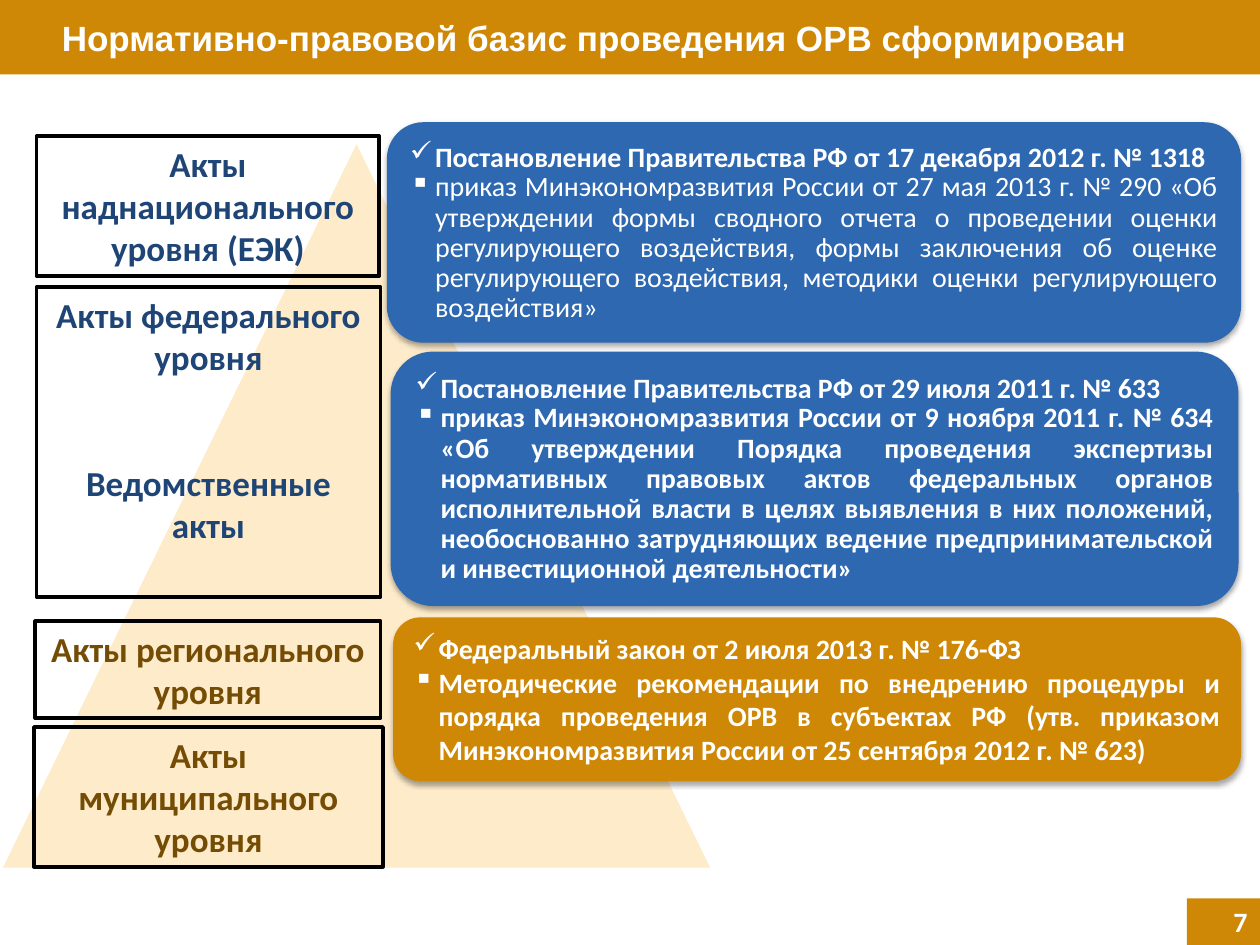
import pptx
import pptx.util
import pptx.dml.color
import pptx.enum.shapes
import pptx.enum.text
import pptx.oxml.ns
from lxml import etree

Inches = pptx.util.Inches
Pt = pptx.util.Pt
Kind = pptx.enum.shapes.MSO_SHAPE
Align = pptx.enum.text.PP_ALIGN
Anchor = pptx.enum.text.MSO_ANCHOR
Fit = pptx.enum.text.MSO_AUTO_SIZE

GOLD = "CF8806"
BLUE = "2D68B1"
NAVY = "1E4576"
BROWN = "744C04"
CREAM = "FDEBCA"
WHITE = "FFFFFF"
BLACK = "000000"


def color(code):
    return pptx.dml.color.RGBColor.from_string(code)


def add_tag(base, name, **attrs):
    tag = etree.SubElement(base, pptx.oxml.ns.qn(name))
    for key, value in attrs.items():
        tag.set(key, str(value))
    return tag


class Deck:
    font = "Calibri"

    def __init__(self):
        self.file = pptx.Presentation()
        self.file.slide_width = Inches(10)
        self.file.slide_height = Inches(7.5)
        self.slide = self.file.slides.add_slide(self.file.slide_layouts[5])

    def shape(self, kind, box, fill=None, line=None):
        item = self.slide.shapes.add_shape(kind, *map(Inches, box))
        item.shadow.inherit = False
        if fill:
            item.fill.solid()
            item.fill.fore_color.rgb = color(fill)
        else:
            item.fill.background()
        if line:
            item.line.color.rgb = color(line)
            item.line.width = Pt(2)
        else:
            item.line.fill.background()
        return item

    def put_text(self, item, lines, size, ink, align, anchor, font=None):
        frame = item.text_frame
        frame.word_wrap = True
        frame.vertical_anchor = anchor
        frame.text = "\n".join(lines)
        for para in frame.paragraphs:
            para.alignment = align
            for run in para.runs:
                run.font.name = font or self.font
                run.font.size = Pt(size)
                run.font.bold = True
                run.font.color.rgb = color(ink)
        return frame

    def title(self, text):
        item = self.slide.shapes.title
        item.left, item.top = Inches(0), Inches(0)
        item.width, item.height = Inches(10), Inches(0.59)
        item.fill.solid()
        item.fill.fore_color.rgb = color(GOLD)
        frame = self.put_text(item, [text], 20, WHITE, Align.LEFT,
                              Anchor.MIDDLE, "Arial")
        frame.auto_size = Fit.NONE
        frame.margin_left = Inches(0.49)

    def label(self, box, ink, *lines):
        item = self.shape(Kind.RECTANGLE, box, line=BLACK)
        frame = self.put_text(item, lines, 20, ink, Align.CENTER, Anchor.TOP)
        for para in frame.paragraphs[1:]:
            para.space_before = Pt(48)

    def card(self, box, fill, act, order, bold=True, space=0.9):
        item = self.shape(Kind.ROUNDED_RECTANGLE, box, fill)
        self.shade(item)
        frame = self.put_text(item, [act, order], 16, WHITE,
                              Align.JUSTIFY, Anchor.TOP)
        head, body = frame.paragraphs
        body.line_spacing = space
        body.runs[0].font.bold = bold
        for para, mark in ((head, "✓"), (body, "▪")):
            props = para._p.get_or_add_pPr()
            props.set("marL", str(Inches(0.2)))
            props.set("indent", str(Inches(-0.2)))
            add_tag(props, "a:buChar", char=mark)

    def shade(self, item):
        effect = item._element.spPr.find(pptx.oxml.ns.qn("a:effectLst"))
        cast = add_tag(effect, "a:outerShdw", blurRad=Pt(3.1), dist=Pt(1.8),
                       dir=90 * 60000, rotWithShape=0)
        tone = add_tag(cast, "a:srgbClr", val=BLACK)
        add_tag(tone, "a:alpha", val=35000)

    def number(self, text):
        item = self.shape(Kind.RECTANGLE, (9.42, 7.13, 0.58, 0.37), GOLD)
        self.put_text(item, [text], 16, WHITE, Align.RIGHT, Anchor.MIDDLE)


def main():
    deck = Deck()
    deck.title("Нормативно-правовой базис проведения ОРВ сформирован")
    deck.shape(Kind.ISOSCELES_TRIANGLE, (0, 1.11, 5.66, 5.79), CREAM, WHITE)

    deck.label((0.29, 1.08, 2.72, 1.11), NAVY,
               "Акты наднационального уровня (ЕЭК)")
    deck.label((0.29, 2.28, 2.73, 2.46), NAVY,
               "Акты федерального уровня", "Ведомственные акты")
    deck.label((0.28, 4.93, 2.74, 0.77), BROWN, "Акты регионального уровня")
    deck.label((0.27, 5.77, 2.77, 1.11), BROWN, "Акты муниципального уровня")

    deck.card((3.07, 0.97, 6.78, 1.75), BLUE,
              "Постановление Правительства РФ от 17 декабря 2012 г. № 1318",
              "приказ Минэкономразвития России от 27 мая 2013 г. № 290 "
              "«Об утверждении формы сводного отчета о проведении оценки "
              "регулирующего воздействия, формы заключения об оценке "
              "регулирующего воздействия, методики оценки регулирующего "
              "воздействия»", bold=False)
    deck.card((3.1, 2.79, 6.73, 2.02), BLUE,
              "Постановление Правительства РФ от 29 июля 2011 г. № 633",
              "приказ Минэкономразвития России от 9 ноября 2011 г. № 634 "
              "«Об утверждении Порядка проведения экспертизы нормативных "
              "правовых актов федеральных органов исполнительной власти в "
              "целях выявления в них положений, необоснованно затрудняющих "
              "ведение предпринимательской и инвестиционной деятельности»")
    deck.card((3.12, 4.9, 6.73, 1.3), GOLD,
              "Федеральный закон от 2 июля 2013 г. № 176-ФЗ",
              "Методические рекомендации по внедрению процедуры и порядка "
              "проведения ОРВ в субъектах РФ (утв. приказом "
              "Минэкономразвития России от 25 сентября 2012 г. № 623)",
              space=1.0)

    deck.number("7")
    deck.file.save("out.pptx")


if __name__ == "__main__":
    main()
